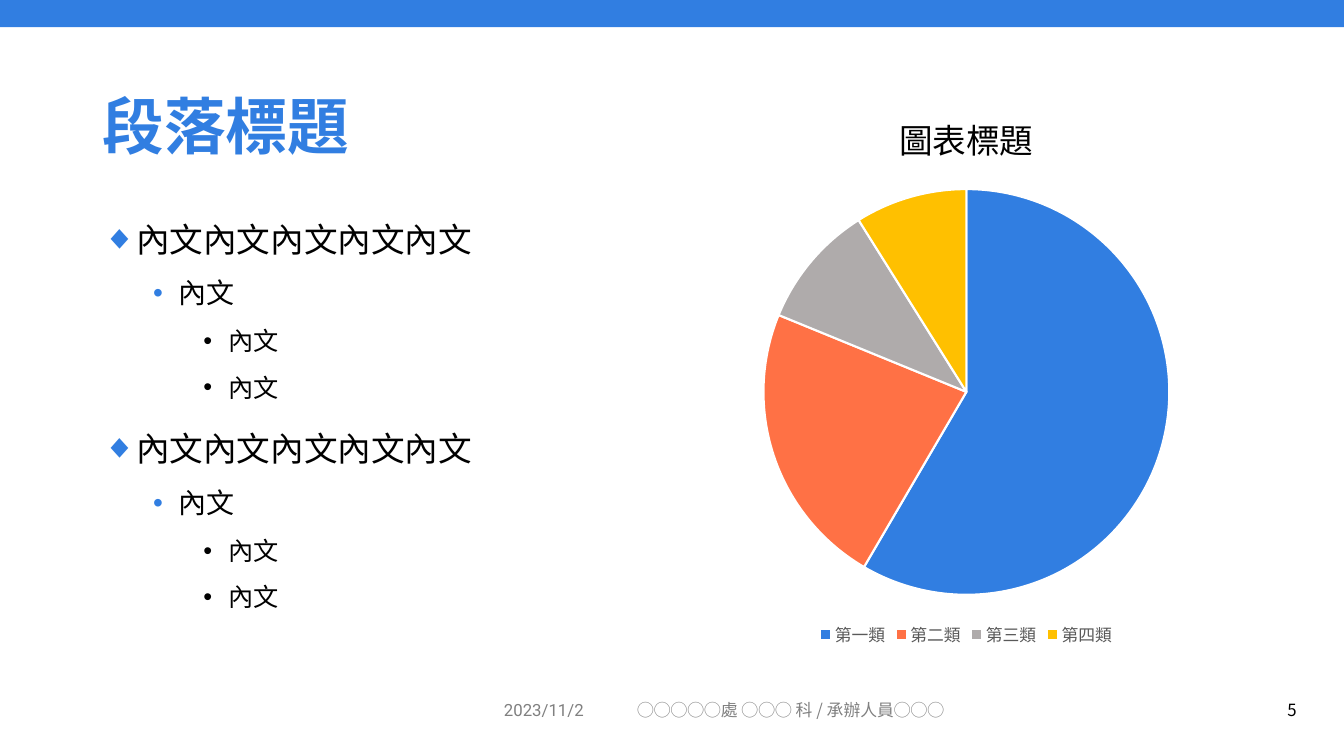
from dataclasses import dataclass

from lxml.etree import SubElement
from pptx import Presentation
from pptx.chart.data import CategoryChartData as Data
from pptx.dml.color import RGBColor as RGB
from pptx.enum.chart import XL_CHART_TYPE as Kind, XL_LEGEND_POSITION as Legend
from pptx.enum.shapes import MSO_SHAPE as Shape
from pptx.enum.text import MSO_ANCHOR as Anchor, PP_ALIGN as Align
from pptx.oxml import parse_xml
from pptx.oxml.ns import nsdecls, qn
from pptx.util import Pt

PX = 9144


@dataclass(frozen=True)
class Theme:
    blue: str = "317EE1"
    black: str = "000000"
    white: str = "FFFFFF"
    gray: str = "808080"
    label: str = "595959"
    slices: tuple = ("317EE1", "FF7145", "AFABAB", "FFC000")
    sans: str = "Noto Sans CJK TC"
    latin: str = "Roboto"
    base: str = "Arial"
    title: int = 44
    head: int = 24
    levels: tuple = (24, 20, 18)
    small: int = 12
    tiny: int = 10


T = Theme()
MARKS = (("◆", T.blue, 25, 10), ("•", T.blue, 75, 5), ("•", T.black, 125, 5))
TOPIC = ((0, "內文內文內文內文內文"), (1, "內文"), (2, "內文"), (2, "內文"))
SHARES = {"第一類": 59, "第二類": 23, "第三類": 10, "第四類": 9}


def px(*nums):
    return [n * PX for n in nums]


def apply(item, **form):
    for key, value in form.items():
        setattr(item, key, value)


def style(font, size, color, name=T.sans, bold=False):
    apply(font, size=Pt(size), name=name, bold=bold)
    font.color.rgb = RGB.from_string(color)


def paint(fill, color):
    fill.solid()
    fill.fore_color.rgb = RGB.from_string(color)


def add_bar(slide, box, color):
    bar = slide.shapes.add_shape(Shape.RECTANGLE, *px(*box))
    bar.shadow.inherit = False
    paint(bar.fill, color)
    bar.line.fill.background()


def add_frame(slide, box, anchor):
    frame = slide.shapes.add_textbox(*px(*box)).text_frame
    apply(frame, word_wrap=True, vertical_anchor=anchor)
    return frame


def add_text(slide, box, text, size, color, name=T.sans, bold=False,
             align=Align.LEFT, space=1.0):
    para = add_frame(slide, box, Anchor.MIDDLE).paragraphs[0]
    apply(para, text=text, alignment=align, line_spacing=space)
    style(para.runs[0].font, size, color, name, bold)


def add_mark(para, level):
    mark, color, left, _ = MARKS[level]
    props = para._p.get_or_add_pPr()
    props.set("marL", str(left * PX))
    props.set("indent", str(-25 * PX))
    tint = SubElement(props, qn("a:buClr"))
    SubElement(tint, qn("a:srgbClr"), val=color)
    SubElement(props, qn("a:buFont"), typeface=T.base)
    SubElement(props, qn("a:buChar"), char=mark)


def add_list(slide, box, items):
    frame = add_frame(slide, box, Anchor.TOP)
    for spot, (level, text) in enumerate(items):
        para = frame.add_paragraph() if spot else frame.paragraphs[0]
        add_mark(para, level)
        before = Pt(MARKS[level][3] if spot else 0)
        apply(para, text=text, level=level, line_spacing=1.3, space_before=before)
        style(para.runs[0].font, T.levels[level], T.black)


def set_plot(chart, **ratios):
    area = chart.element.find(".//" + qn("c:plotArea"))
    old = area.find(qn("c:layout"))
    if old is not None:
        area.remove(old)
    parts = "".join(f'<c:{key} val="{value}"/>' for key, value in ratios.items())
    area.insert(0, parse_xml(
        f'<c:layout {nsdecls("c")}><c:manualLayout><c:layoutTarget val="inner"/>'
        f'<c:xMode val="edge"/><c:yMode val="edge"/>{parts}'
        '</c:manualLayout></c:layout>'))


def add_pie(slide, box, title, shares):
    data = Data()
    data.categories = list(shares)
    data.add_series("Series 1", list(shares.values()))
    chart = slide.shapes.add_chart(Kind.PIE, *px(*box), data).chart
    style(chart.font, T.tiny, T.black, T.base)
    apply(chart, has_title=True, has_legend=True)
    head = chart.chart_title.text_frame
    head.text = title
    style(head.paragraphs[0].runs[0].font, T.head, T.black)
    apply(chart.legend, position=Legend.BOTTOM, include_in_layout=False)
    style(chart.legend.font, T.small, T.label)
    plot = chart.plots[0]
    plot.vary_by_categories = True
    for spot, color in enumerate(T.slices):
        form = plot.series[0].points[spot].format
        paint(form.fill, color)
        paint(form.line.fill, T.white)
        form.line.width = Pt(1.5)
    set_plot(chart, x=0.14, y=0.18, w=0.72, h=0.72)
    add_east(chart.element)


def add_east(root):
    for latin in list(root.iter(qn("a:latin"))):
        face = latin.get("typeface")
        latin.addnext(parse_xml(f'<a:ea {nsdecls("a")} typeface="{face}"/>'))


def main():
    deck = Presentation()
    wide, high = px(1333, 750)
    apply(deck, slide_width=wide, slide_height=high)
    slide = deck.slides.add_slide(deck.slide_layouts[6])
    paint(slide.background.fill, T.white)
    add_bar(slide, (0, 0, 1333, 27), T.blue)
    add_text(slide, (92, 74, 1150, 110), "段落標題", T.title, T.blue,
             bold=True, space=0.9)
    add_list(slide, (92, 200, 567, 476), TOPIC * 2)
    add_text(slide, (476, 684, 113, 40), "2023/11/2", T.small, T.gray,
             name=T.latin, align=Align.RIGHT)
    add_text(slide, (622, 684, 450, 40), "◯◯◯◯◯處 ◯◯◯ 科 / 承辦人員◯◯◯",
             T.small, T.gray)
    add_text(slide, (1230, 684, 66, 40), "5", T.small, T.black, align=Align.RIGHT)
    add_pie(slide, (675, 87, 567, 559), "圖表標題", SHARES)
    add_east(slide.element)
    deck.save("out.pptx")


if __name__ == "__main__":
    main()
